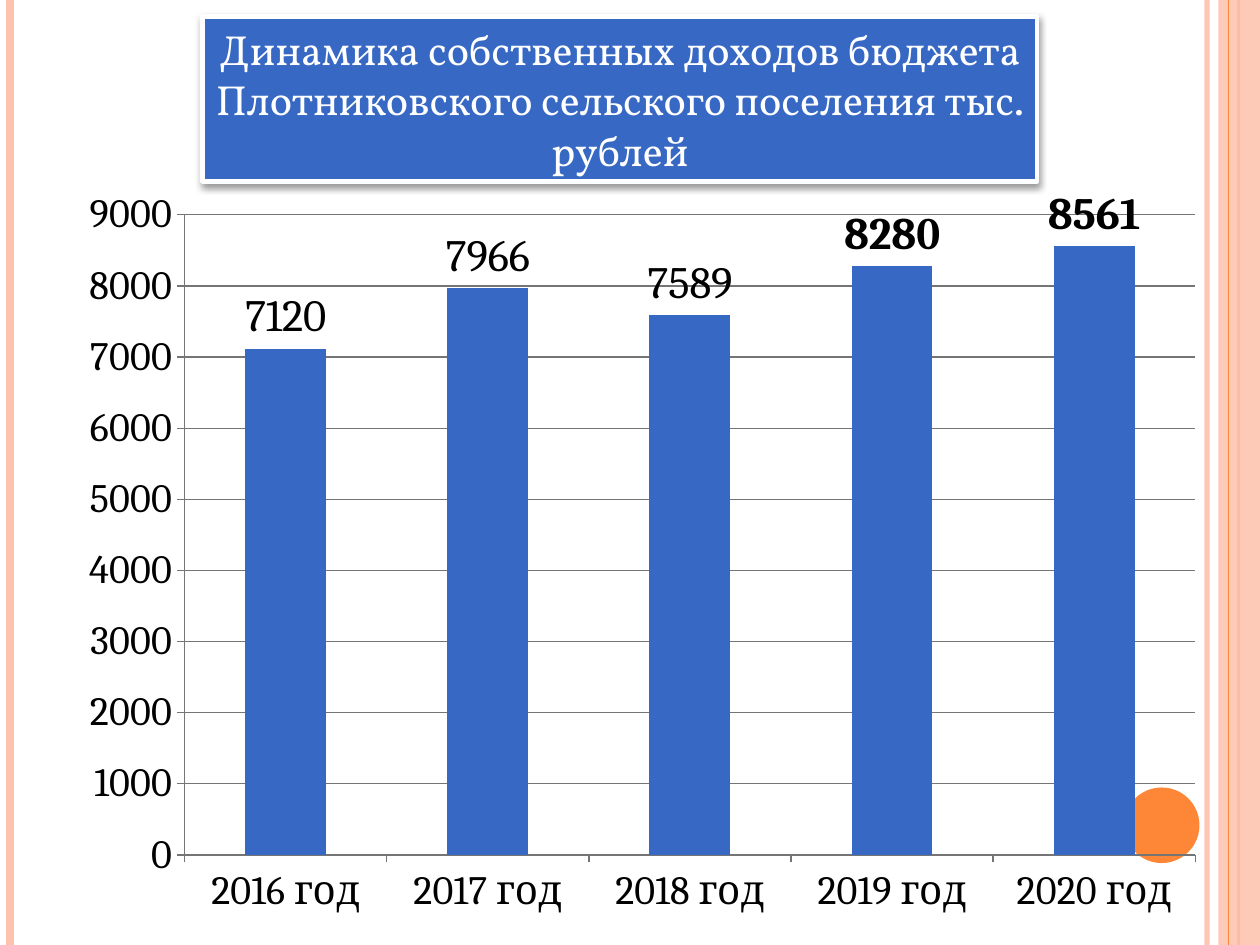
from dataclasses import dataclass

from lxml.etree import SubElement
from pptx import Presentation
from pptx.chart.data import CategoryChartData
from pptx.dml.color import RGBColor
from pptx.enum.chart import XL_CHART_TYPE, XL_LABEL_POSITION, XL_TICK_MARK
from pptx.enum.shapes import MSO_CONNECTOR, MSO_SHAPE
from pptx.enum.text import MSO_ANCHOR, PP_ALIGN
from pptx.oxml.ns import qn
from pptx.util import Inches, Pt


@dataclass(frozen=True)
class Theme:
    blue: str = "3668C4"
    peach: str = "FEC3AE"
    orange: str = "FE8637"
    white: str = "FFFFFF"
    black: str = "000000"
    gray: str = "757575"
    head_font: str = "Vollkorn"
    chart_font: str = "Cambria"
    head_size: float = 24
    axis_size: float = 23
    label_size: float = 25.6


THEME = Theme()
TITLE = ("Динамика собственных доходов бюджета "
         "Плотниковского сельского поселения тыс. рублей")
INCOME = {2016: 7120, 2017: 7966, 2018: 7589, 2019: 8280, 2020: 8561}
PLOT = {"x": 0.132, "y": 0.049, "w": 0.857, "h": 0.841}
RULES = [
    (9.58, THEME.peach, 3, 93),
    (0.08, THEME.peach, 4.5, 100),
    (9.83, THEME.orange, 1.5, 100),
]


def style(font, name, size, color, bold=False):
    font.name = name
    font.size = Pt(size)
    font.bold = bold
    font.color.rgb = RGBColor.from_string(color)


def fade(part, percent):
    if percent < 100:
        color = next(part.iter(qn("a:srgbClr")))
        SubElement(color, qn("a:alpha"), val=str(percent * 1000))


def add_rule(slide, x, color, width, alpha=100):
    rule = slide.shapes.add_connector(
        MSO_CONNECTOR.STRAIGHT, Inches(x), Inches(0), Inches(x), Inches(7.5))
    rule.line.color.rgb = RGBColor.from_string(color)
    rule.line.width = Pt(width)
    props = rule._element.spPr
    fade(props, alpha)
    SubElement(props, qn("a:effectLst"))


def add_shape(slide, kind, box, color, alpha=100):
    shape = slide.shapes.add_shape(kind, *map(Inches, box))
    shape.shadow.inherit = False
    shape.fill.solid()
    shape.fill.fore_color.rgb = RGBColor.from_string(color)
    shape.line.fill.background()
    fade(shape._element.spPr, alpha)
    return shape


def add_text(shape, text, *, name, size, color, align=PP_ALIGN.CENTER):
    frame = shape.text_frame
    frame.word_wrap = True
    frame.vertical_anchor = MSO_ANCHOR.MIDDLE
    line = frame.paragraphs[0]
    line.alignment = align
    run = line.add_run()
    run.text = text
    style(run.font, name, size, color)


def add_shadow(shape, color, alpha, blur, dist):
    effects = shape._element.spPr.find(qn("a:effectLst"))
    shadow = SubElement(
        effects, qn("a:outerShdw"), blurRad=str(Pt(blur)), dist=str(Pt(dist)),
        dir=str(90 * 60000), algn="ctr", rotWithShape="0")
    SubElement(shadow, qn("a:srgbClr"), val=color)
    fade(shadow, alpha)


def add_title(slide):
    box = add_shape(slide, MSO_SHAPE.RECTANGLE, (1.61, 0.13, 6.62, 1.31), THEME.blue)
    box.line.color.rgb = RGBColor.from_string(THEME.white)
    box.line.width = Pt(2.75)
    add_shadow(box, THEME.black, 40, 4, 2)
    add_text(box, TITLE, name=THEME.head_font, size=THEME.head_size, color=THEME.white)


def set_line(line):
    line.color.rgb = RGBColor.from_string(THEME.gray)
    line.width = Pt(0.75)


def set_plot(chart):
    area = chart._chartSpace.chart.plotArea
    for old in area.findall(qn("c:layout")):
        area.remove(old)
    layout = SubElement(area, qn("c:layout"))
    area.insert(0, layout)
    manual = SubElement(layout, qn("c:manualLayout"))
    SubElement(manual, qn("c:layoutTarget"), val="inner")
    for side in "xy":
        SubElement(manual, qn(f"c:{side}Mode"), val="edge")
    for key, value in PLOT.items():
        SubElement(manual, qn(f"c:{key}"), val=str(value))


def set_labels(series):
    labels = series.data_labels
    labels.show_value = True
    labels.position = XL_LABEL_POSITION.OUTSIDE_END
    style(labels.font, THEME.chart_font, THEME.label_size, THEME.black, bold=True)
    for point in range(3):
        label = series.points[point].data_label
        style(label.font, THEME.chart_font, THEME.label_size, THEME.black)
        label.position = XL_LABEL_POSITION.OUTSIDE_END


def add_chart(slide):
    data = CategoryChartData()
    data.categories = [f"{year} год" for year in INCOME]
    data.add_series("Series 1", INCOME.values())
    box = map(Inches, (0.23, 1.41, 9.36, 6.04))
    chart = slide.shapes.add_chart(XL_CHART_TYPE.COLUMN_CLUSTERED, *box, data).chart
    chart.has_legend = False
    chart.has_title = False
    style(chart.font, THEME.chart_font, THEME.axis_size, THEME.black)
    set_plot(chart)
    for axis in (chart.category_axis, chart.value_axis):
        axis.major_tick_mark = XL_TICK_MARK.OUTSIDE
        axis.minor_tick_mark = XL_TICK_MARK.NONE
        set_line(axis.format.line)
    scale = chart.value_axis
    scale.minimum_scale, scale.maximum_scale, scale.major_unit = 0, 9000, 1000
    scale.has_major_gridlines = True
    set_line(scale.major_gridlines.format.line)
    plot = chart.plots[0]
    plot.vary_by_categories = False
    plot.gap_width = 150
    series = plot.series[0]
    series.format.fill.solid()
    series.format.fill.fore_color.rgb = RGBColor.from_string(THEME.blue)
    set_labels(series)


def main():
    deck = Presentation()
    deck.slide_width, deck.slide_height = Inches(10), Inches(7.5)
    slide = deck.slides.add_slide(deck.slide_layouts[6])
    for rule in RULES:
        add_rule(slide, *rule)
    add_shape(slide, MSO_SHAPE.RECTANGLE, (9.67, 0, 0.33, 7.5), THEME.peach, 87)
    add_rule(slide, 9.75, THEME.orange, 0.75)
    add_shape(slide, MSO_SHAPE.OVAL, (8.92, 6.25, 0.6, 0.6), THEME.orange)
    add_title(slide)
    add_chart(slide)
    deck.save("out.pptx")


if __name__ == "__main__":
    main()
